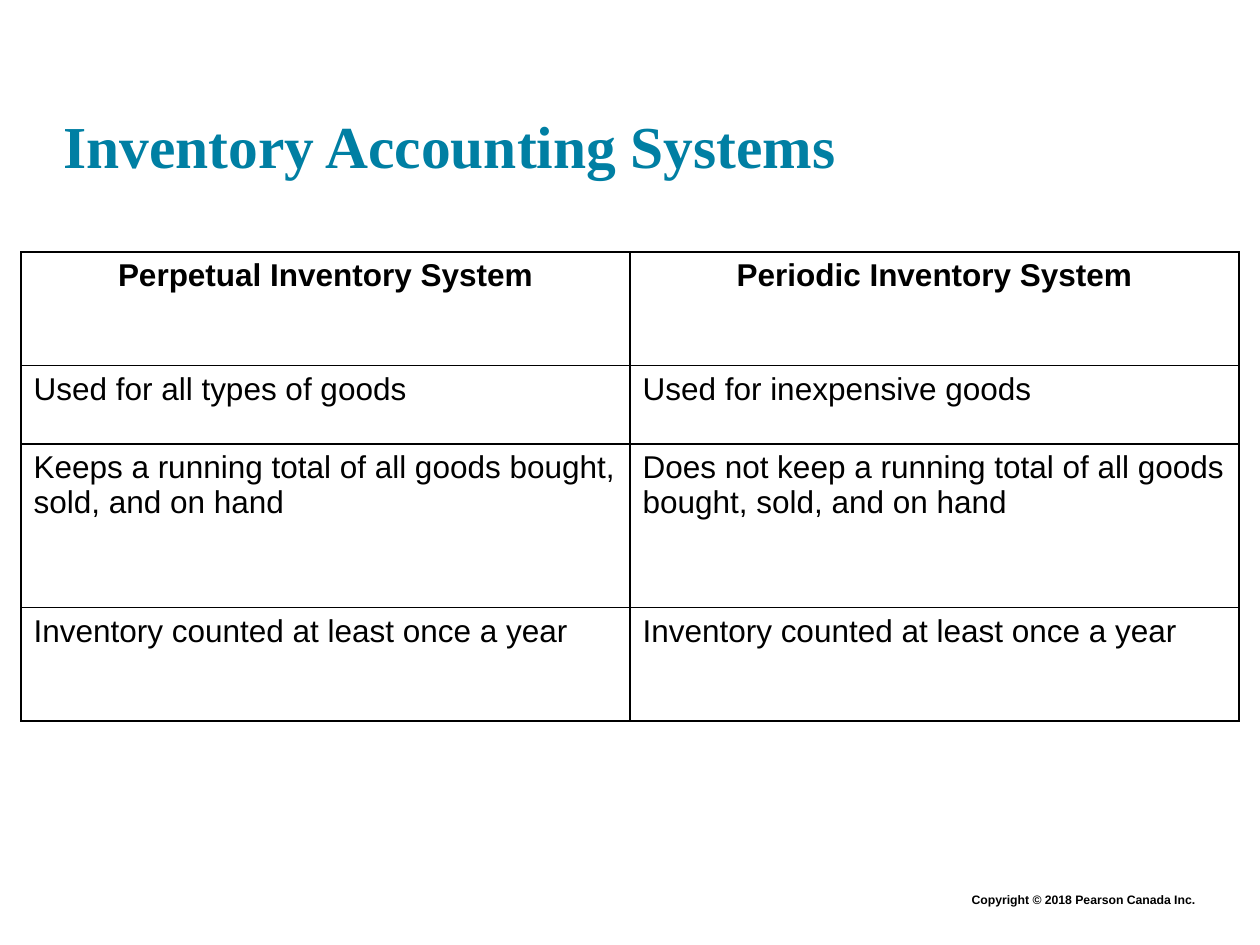
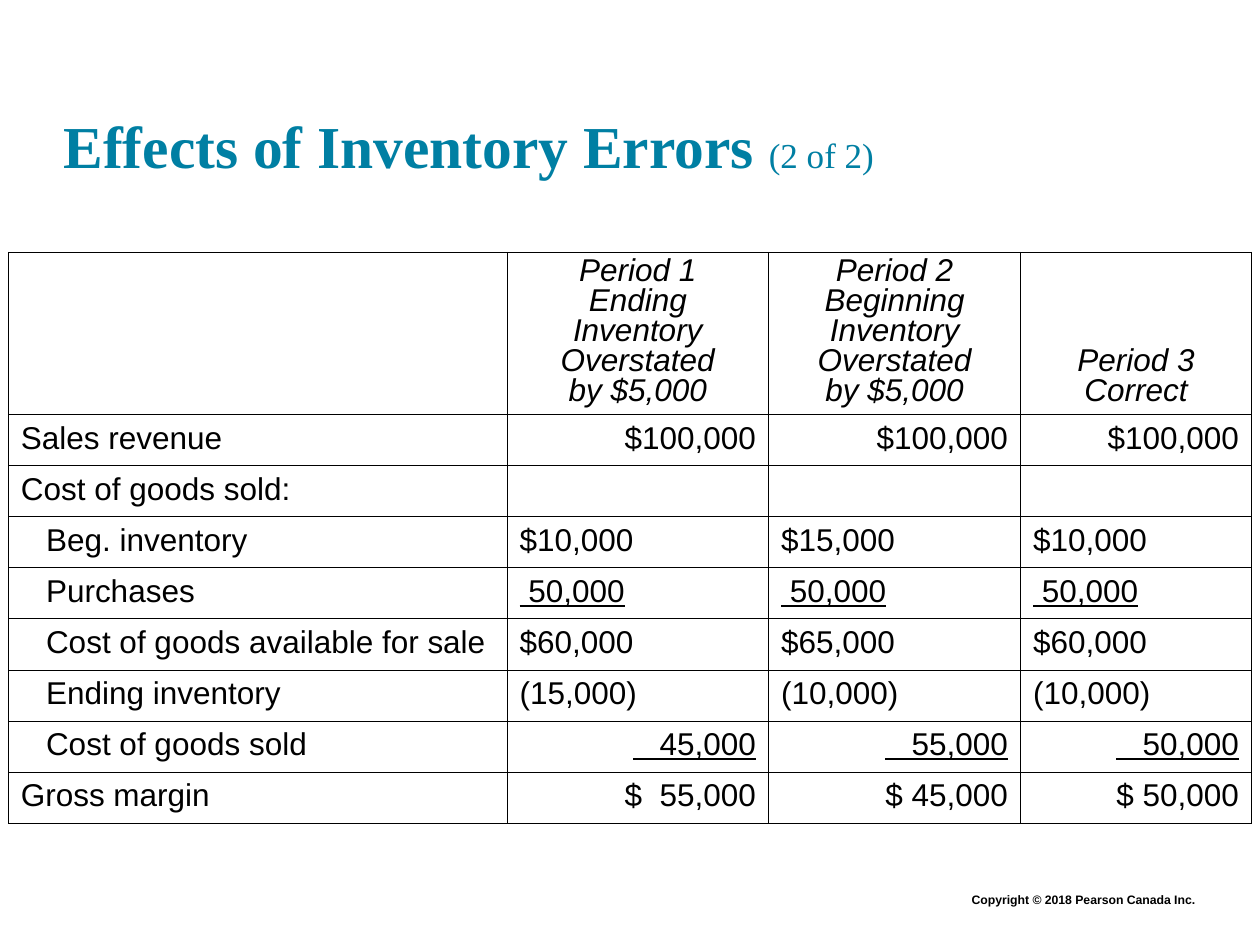
from lxml import etree
from pptx import Presentation
from pptx.dml.color import RGBColor
from pptx.enum.text import MSO_ANCHOR, PP_ALIGN
from pptx.oxml.ns import qn
from pptx.util import Pt

LEFT, CENTER, RIGHT = PP_ALIGN.LEFT, PP_ALIGN.CENTER, PP_ALIGN.RIGHT
TOP, BOTTOM = MSO_ANCHOR.TOP, MSO_ANCHOR.BOTTOM

COLORS = {"title": "007FA3", "text": "000000", "border": "000000"}
TITLE_FONT, BODY_FONT = "Times New Roman", "Arial"
BODY_SIZE = 18
HEADING_PITCH = 17.1
CELL_MARGIN = 7.2
INDENT = 14.4
TABLE_TOP = 144

SYSTEMS = [
    ("Perpetual Inventory System", "Periodic Inventory System"),
    ("Used for all types of goods", "Used for inexpensive goods"),
    ("Keeps a running total of all goods bought, sold, and on hand",
     "Does not keep a running total of all goods bought, sold, and on hand"),
    ("Inventory counted at least once a year",) * 2,
]

PERIODS = [
    "Period 1\nEnding\nInventory\nOverstated\nby $5,000",
    "Period 2\nBeginning\nInventory\nOverstated\nby $5,000",
    "Period 3\nCorrect",
]

# label, amounts, indented label, amount alignment, underlined amounts
STATEMENT = [
    ("Sales revenue", ["$100,000"] * 3, False, RIGHT, False),
    ("Cost of goods sold:", [], False, LEFT, False),
    ("Beg. inventory", ["$10,000", "$15,000", "$10,000"], True, LEFT, False),
    ("Purchases", [" 50,000"] * 3, True, LEFT, True),
    ("Cost of goods available for sale", ["$60,000", "$65,000", "$60,000"], True, LEFT, False),
    ("Ending inventory", ["(15,000)", "(10,000)", "(10,000)"], True, LEFT, False),
    ("Cost of goods sold", ["   45,000", "   55,000", "   50,000"], True, RIGHT, True),
    ("Gross margin", ["$  55,000", "$ 45,000", "$ 50,000"], False, RIGHT, False),
]


def style_font(font, name, size, color, bold=False, italic=False, underline=False):
    font.name, font.size = name, Pt(size)
    font.bold, font.italic, font.underline = bold, italic, underline
    font.color.rgb = RGBColor.from_string(COLORS[color])


def add_title(slide, title, part=""):
    frame = slide.shapes.add_textbox(Pt(36.3), Pt(16.8), Pt(648), Pt(86.4)).text_frame
    frame.word_wrap = True
    frame.vertical_anchor = BOTTOM
    frame.margin_left = frame.margin_right = frame.margin_top = frame.margin_bottom = 0
    line = frame.paragraphs[0]
    line.text = title
    style_font(line.runs[0].font, TITLE_FONT, 34, "title", bold=True)
    if part:
        part_run = line.add_run()
        part_run.text = part
        style_font(part_run.font, TITLE_FONT, 20, "title")


def add_copyright(slide):
    frame = slide.shapes.add_textbox(Pt(126), Pt(506.16), Pt(564), Pt(15.84)).text_frame
    frame.word_wrap = True
    line = frame.paragraphs[0]
    line.text = "Copyright © 2018 Pearson Canada Inc."
    line.alignment = RIGHT
    style_font(line.runs[0].font, BODY_FONT, 7, "text", bold=True)


def start_slide(prs, title, part=""):
    slide = prs.slides.add_slide(prs.slide_layouts[6])
    add_copyright(slide)
    add_title(slide, title, part)
    return slide


def set_borders(cell, width):
    properties = cell._tc.get_or_add_tcPr()
    for side in ("a:lnL", "a:lnR", "a:lnT", "a:lnB"):
        line = etree.SubElement(properties, qn(side), w=str(int(Pt(width))))
        fill = etree.SubElement(line, qn("a:solidFill"))
        etree.SubElement(fill, qn("a:srgbClr"), val=COLORS["border"])


def add_grid(slide, left, column_widths, row_heights, border_width):
    """Add a plain table with black borders and no fill."""
    grid = slide.shapes.add_table(
        len(row_heights), len(column_widths), Pt(left), Pt(TABLE_TOP),
        Pt(sum(column_widths)), Pt(sum(row_heights))).table
    grid.first_row = grid.horz_banding = False
    for column, width in zip(grid.columns, column_widths):
        column.width = Pt(width)
    for row, height in zip(grid.rows, row_heights):
        row.height = Pt(height)
    for cell in grid.iter_cells():
        set_borders(cell, border_width)
        cell.fill.background()
    return grid


def write_cell(cell, text, align=LEFT, anchor=TOP, spacing=None, indent=0, **emphasis):
    cell.text_frame.text = text
    cell.vertical_anchor = anchor
    cell.margin_left = Pt(CELL_MARGIN + indent)
    for line in cell.text_frame.paragraphs:
        line.alignment = align
        line.line_spacing = spacing
        for run in line.runs:
            style_font(run.font, BODY_FONT, BODY_SIZE, "text", **emphasis)


def build_systems_slide(prs):
    slide = start_slide(prs, "Inventory Accounting Systems")
    grid = add_grid(slide, 12, [348, 348], [64.8, 44.8, 93.6, 64.8], 1)
    for r, row in enumerate(SYSTEMS):
        for c, text in enumerate(row):
            heading = r == 0
            write_cell(grid.cell(r, c), text, CENTER if heading else LEFT, bold=heading)


def build_errors_slide(prs):
    slide = start_slide(prs, "Effects of Inventory Errors ", "(2 of 2)")
    row_heights = [92.7] + [29.2] * len(STATEMENT)
    grid = add_grid(slide, 4.7, [285, 149.5, 144, 132], row_heights, 0.25)

    # Period headings
    for c, period in enumerate(PERIODS, start=1):
        write_cell(grid.cell(0, c), period, CENTER, BOTTOM,
                   spacing=Pt(HEADING_PITCH), italic=True)

    # Statement lines
    for r, (label, amounts, indented, align, underlined) in enumerate(STATEMENT, start=1):
        write_cell(grid.cell(r, 0), label, indent=INDENT if indented else 0)
        for c, amount in enumerate(amounts, start=1):
            write_cell(grid.cell(r, c), amount, align, underline=underlined)


def main():
    prs = Presentation()
    prs.slide_width, prs.slide_height = Pt(720), Pt(540)
    build_systems_slide(prs)
    build_errors_slide(prs)
    prs.save("out.pptx")


if __name__ == "__main__":
    main()
